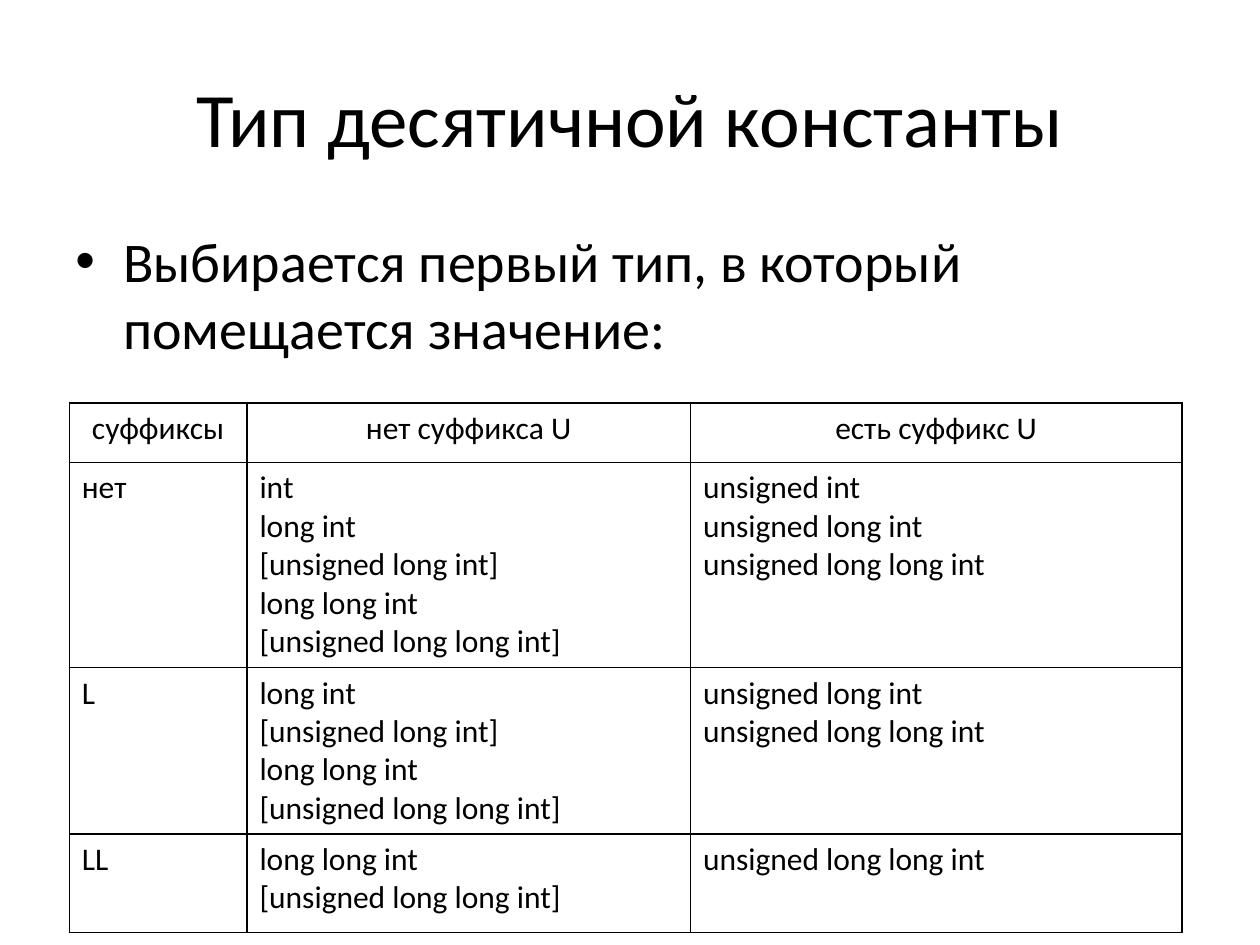
from pptx import Presentation
from pptx.dml.color import RGBColor
from pptx.enum.text import MSO_ANCHOR, PP_ALIGN
from pptx.oxml import parse_xml
from pptx.oxml.ns import nsdecls
from pptx.util import Inches, Pt

TITLE = "Тип десятичной константы"
LEAD = "Выбирается первый тип, в который помещается значение:"
INT, LONG, LLONG = "int", "long int", "long long int"
ULONG, ULLONG = "unsigned long int", "unsigned long long int"
OPT, OPTL = f"[{ULONG}]", f"[{ULLONG}]"
ROWS = [
    (["суффиксы"], ["нет суффикса U"], ["есть суффикс U"]),
    (["нет"], [INT, LONG, OPT, LLONG, OPTL], ["unsigned int", ULONG, ULLONG]),
    (["L"], [LONG, OPT, LLONG, OPTL], [ULONG, ULLONG]),
    (["LL"], [LLONG, OPTL], [ULLONG]),
]
WIDTHS = [1.41, 3.52, 3.9]
HEIGHTS = [0.47, 1.63, 1.32, 0.78]
INK = "000000"


def color(code):
    return RGBColor.from_string(code)


def style(frame, size, align):
    look = {"name": "Calibri", "size": Pt(size), "bold": False}
    for para in frame.paragraphs:
        para.alignment = align
        for run in para.runs:
            for key, val in look.items():
                setattr(run.font, key, val)
            run.font.color.rgb = color(INK)


def border(cell):
    props = cell._tc.get_or_add_tcPr()
    for spot, side in enumerate("LRTB"):
        props.insert(spot, parse_xml(
            f'<a:ln{side} {nsdecls("a")} w="{Pt(1)}"><a:solidFill>'
            f'<a:srgbClr val="{INK}"/></a:solidFill></a:ln{side}>'))


def head(slide):
    title = slide.shapes.title
    place = {"left": 0.5, "top": 0.3, "width": 9, "height": 1.25}
    for key, val in place.items():
        setattr(title, key, Inches(val))
    title.text_frame.text = TITLE
    title.text_frame.vertical_anchor = MSO_ANCHOR.MIDDLE
    style(title.text_frame, 44, PP_ALIGN.CENTER)


def lead(slide):
    box = slide.shapes.add_textbox(*map(Inches, (0.5, 1.75, 9, 1.3)))
    frame = box.text_frame
    frame.word_wrap = True
    frame.text = LEAD
    style(frame, 32, PP_ALIGN.LEFT)
    para = frame.paragraphs[0]
    para.space_before = Pt(6.4)
    props = para._p.get_or_add_pPr()
    props.set("marL", str(Inches(0.38)))
    props.set("indent", str(-Inches(0.38)))
    props.append(parse_xml(f'<a:buFont {nsdecls("a")} typeface="Arial"/>'))
    props.append(parse_xml(f'<a:buChar {nsdecls("a")} char="•"/>'))


def grid(slide):
    area = (0.55, 3.2, sum(WIDTHS), sum(HEIGHTS))
    table = slide.shapes.add_table(
        len(ROWS), len(WIDTHS), *map(Inches, area)).table
    table.first_row = table.horz_banding = False
    for col, wide in zip(table.columns, WIDTHS):
        col.width = Inches(wide)
    for row, high in zip(table.rows, HEIGHTS):
        row.height = Inches(high)
    for r, row in enumerate(ROWS):
        for c, lines in enumerate(row):
            cell = table.cell(r, c)
            cell.text = "\n".join(lines)
            cell.fill.background()
            border(cell)
            style(cell.text_frame, 18,
                  PP_ALIGN.LEFT if r else PP_ALIGN.CENTER)


def main():
    deck = Presentation()
    deck.slide_width, deck.slide_height = Inches(10), Inches(7.5)
    slide = deck.slides.add_slide(deck.slide_layouts[5])
    head(slide)
    lead(slide)
    grid(slide)
    deck.save("out.pptx")


if __name__ == "__main__":
    main()
